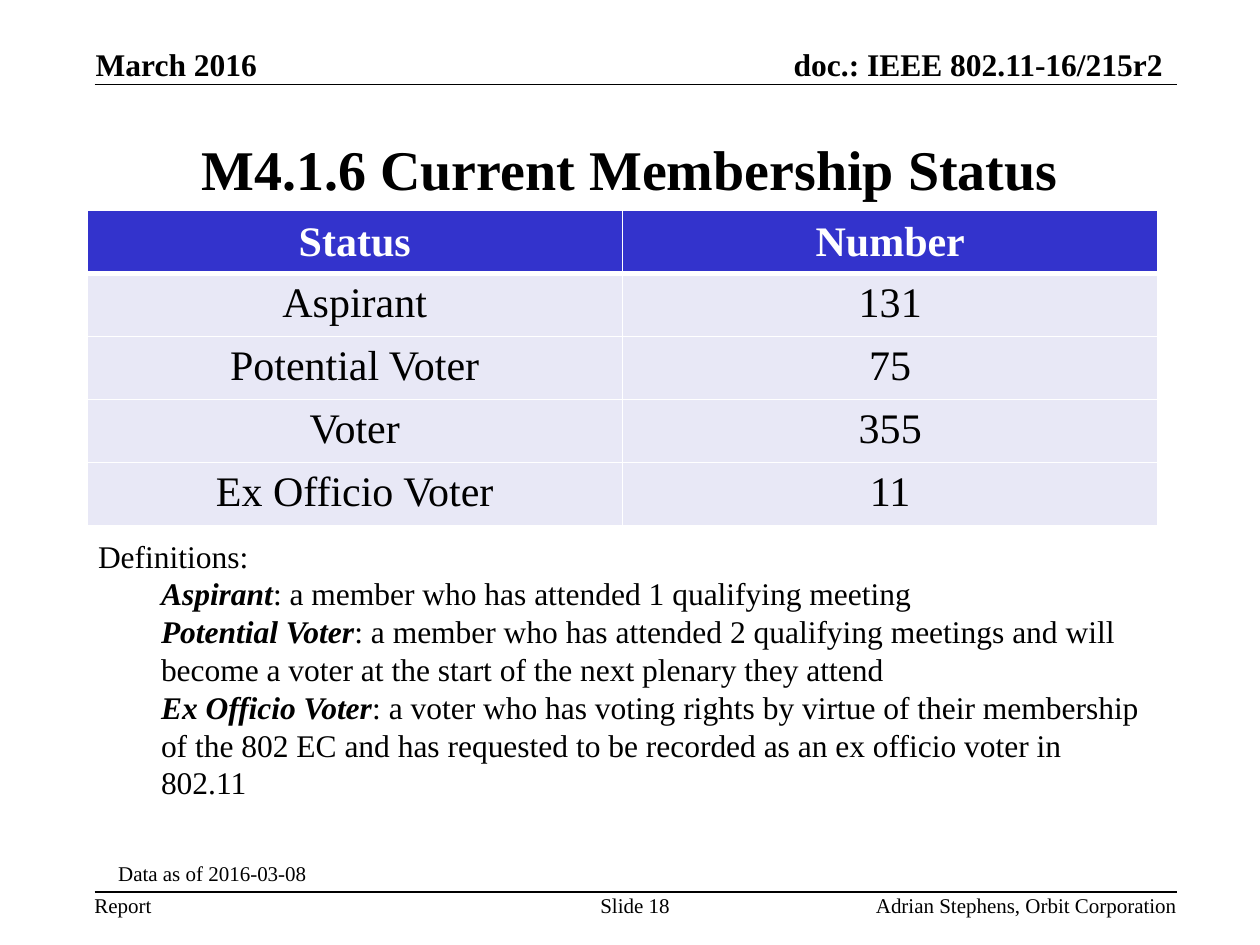
from lxml import etree
from pptx import Presentation
from pptx.dml.color import RGBColor
from pptx.enum.shapes import MSO_CONNECTOR
from pptx.enum.text import MSO_ANCHOR, MSO_AUTO_SIZE, PP_ALIGN
from pptx.oxml import parse_xml
from pptx.oxml.ns import nsdecls, qn
from pptx.util import Inches, Pt

LEFT, MID, RIGHT = PP_ALIGN.LEFT, PP_ALIGN.CENTER, PP_ALIGN.RIGHT
TOP, CENTER, BOTTOM = MSO_ANCHOR.TOP, MSO_ANCHOR.MIDDLE, MSO_ANCHOR.BOTTOM
FONT = "Times New Roman"
HUES = {"ink": "000000", "paper": "FFFFFF", "head": "3333CC", "row": "E8E8F6"}

TITLE = "M4.1.6 Current Membership Status"
ROWS = [
    ("Status", "Number"),
    ("Aspirant", "131"),
    ("Potential Voter", "75"),
    ("Voter", "355"),
    ("Ex Officio Voter", "11"),
]
TERMS = [
    ("Aspirant", ": a member who has attended 1 qualifying meeting"),
    ("Potential Voter", ": a member who has attended 2 qualifying meetings and will "
     "become a voter at the start of the next plenary they attend"),
    ("Ex Officio Voter", ": a voter who has voting rights by virtue of their membership "
     "of the 802 EC and has requested to be recorded as an ex officio voter in 802.11"),
]
HEAD = {"size": 18, "bold": True, "anchor": BOTTOM}
FOOT = {"size": 12}
LABELS = [
    ("March 2016", (0.76, 0.36, 3, 0.3), HEAD),
    ("doc.: IEEE 802.11-16/215r2", (5.23, 0.36, 4, 0.3), {**HEAD, "align": RIGHT}),
    ("Report", (0.75, 7.08, 2, 0.2), FOOT),
    ("Slide 18", (4.04, 7.08, 2, 0.2), {**FOOT, "align": MID}),
    ("Adrian Stephens, Orbit Corporation", (5.34, 7.08, 4, 0.2), {**FOOT, "align": RIGHT}),
]
RULES = [0.67, 7.08]


def tint(name):
    """Return the named colour."""
    return RGBColor.from_string(HUES[name])


def write(para, text, size=18, hue="ink", bold=False, italic=False, align=LEFT):
    """Add one formatted run to a paragraph."""
    para.alignment = align
    run = para.add_run()
    run.text = text
    font = run.font
    font.name, font.size = FONT, Pt(size)
    font.bold, font.italic = bold, italic
    font.color.rgb = tint(hue)


def add_box(slide, spot, pad=(0, 0), anchor=TOP):
    """Add a wrapping text box and return its frame."""
    frame = slide.shapes.add_textbox(*map(Inches, spot)).text_frame
    frame.word_wrap, frame.vertical_anchor = True, anchor
    frame.margin_left = frame.margin_right = Inches(pad[0])
    frame.margin_top = frame.margin_bottom = Inches(pad[1])
    return frame


def add_rule(slide, y):
    """Draw a thin line across the slide."""
    rule = slide.shapes.add_connector(
        MSO_CONNECTOR.STRAIGHT, Inches(0.75), Inches(y), Inches(9.34), Inches(y))
    rule.line.color.rgb, rule.line.width = tint("ink"), Pt(1)
    etree.SubElement(rule._element.spPr, qn("a:effectLst"))


def edge(cell, widths):
    """Give a cell white borders."""
    props = cell._tc.get_or_add_tcPr()
    for side, width in widths.items():
        props.append(parse_xml(
            f'<a:ln{side} {nsdecls("a")} w="{Pt(width)}"><a:solidFill>'
            f'<a:srgbClr val="{HUES["paper"]}"/></a:solidFill></a:ln{side}>'))


def add_grid(slide):
    """Add the membership table."""
    spot = map(Inches, (0.69, 1.67, 8.5, 2.5))
    grid = slide.shapes.add_table(len(ROWS), len(ROWS[0]), *spot).table
    for r, row in enumerate(ROWS):
        head = r == 0
        for c, text in enumerate(row):
            cell = grid.cell(r, c)
            edge(cell, {"L": 1, "R": 1, "T": 3 if r == 1 else 1, "B": 3 if head else 1})
            cell.fill.solid()
            cell.fill.fore_color.rgb = tint("head" if head else "row")
            cell.vertical_anchor = CENTER if head else TOP
            write(cell.text_frame.paragraphs[0], text, size=24, bold=head,
                  hue="paper" if head else "ink", align=MID)


def add_terms(slide):
    """Add the indented definitions."""
    frame = add_box(slide, (0.68, 4.21, 8.5, 2.22), pad=(0.1, 0.05))
    write(frame.paragraphs[0], "Definitions:")
    for term, text in TERMS:
        para = frame.add_paragraph()
        para.level = 1
        props = para._p.get_or_add_pPr()
        props.set("marL", str(Inches(0.5)))
        props.set("indent", "0")
        write(para, term, bold=True, italic=True)
        write(para, text)


def add_title(slide):
    """Place and format the title."""
    title = slide.shapes.title
    title.left, title.top, title.width, title.height = map(Inches, (0.75, 0.75, 8.5, 1.17))
    frame = title.text_frame
    frame.auto_size, frame.vertical_anchor = MSO_AUTO_SIZE.NONE, CENTER
    write(frame.paragraphs[0], TITLE, size=32, bold=True, align=MID)


def main():
    """Build the membership slide."""
    deck = Presentation()
    deck.slide_width, deck.slide_height = Inches(10), Inches(7.5)
    slide = deck.slides.add_slide(deck.slide_layouts[5])
    add_title(slide)
    for y in RULES:
        add_rule(slide, y)
    for text, spot, form in LABELS:
        form = dict(form)
        frame = add_box(slide, spot, anchor=form.pop("anchor", TOP))
        write(frame.paragraphs[0], text, **form)
    add_grid(slide)
    add_terms(slide)
    note = add_box(slide, (0.84, 6.78, 8.5, 0.3), pad=(0.1, 0.05))
    write(note.paragraphs[0], "Data as of 2016-03-08", size=12)
    deck.save("out.pptx")


if __name__ == "__main__":
    main()
